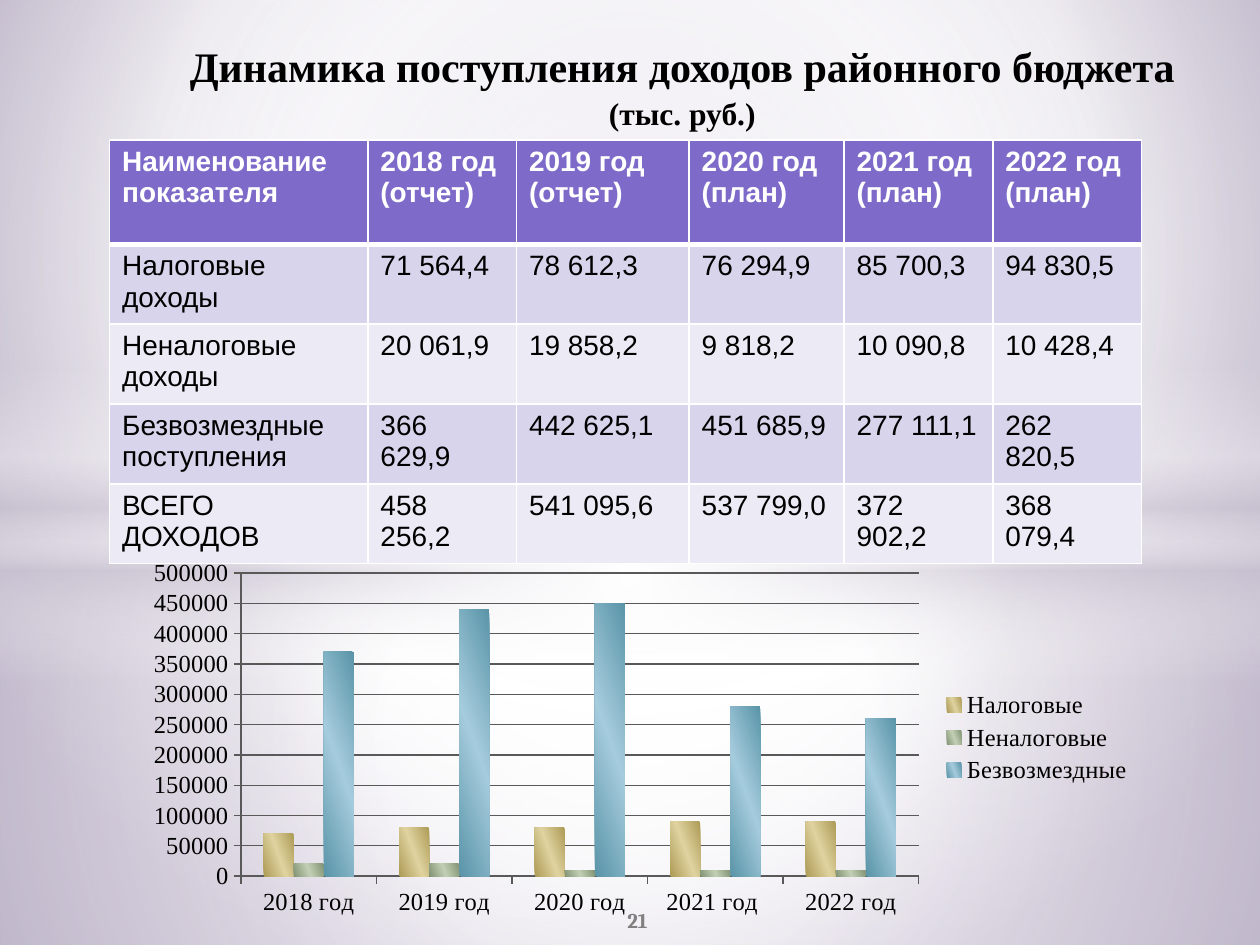
from lxml.etree import SubElement
from pptx import Presentation
from pptx.chart.data import CategoryChartData
from pptx.enum.chart import XL_CHART_TYPE, XL_LEGEND_POSITION, XL_TICK_MARK
from pptx.enum.shapes import MSO_SHAPE
from pptx.enum.text import MSO_ANCHOR, PP_ALIGN
from pptx.dml.color import RGBColor
from pptx.oxml.ns import qn
from pptx.util import Inches, Pt

COLORS = {
    "white": "FFFFFF", "black": "000000", "gray": "808080", "axis": "595959",
    "mist": "C9C2D1", "lilac": "C1B7CD", "plum": "A191B5",
    "header": "7E6BC9", "band_dark": "D8D4EB", "band_light": "ECEBF5",
    "gold_dark": "AD9B56", "gold_light": "E0D3A0",
    "green_dark": "839476", "green_light": "C2CFB4",
    "blue_dark": "5A94A8", "blue_light": "A5CCDD",
}
SERIF = "Times New Roman"
CENTER = (50, 50, 50, 50)

HEADER = ["Наименование показателя", "2018 год (отчет)", "2019 год (отчет)",
          "2020 год (план)", "2021 год (план)", "2022 год (план)"]
ROWS = [
    ["Налоговые доходы", "71 564,4", "78 612,3", "76 294,9", "85 700,3", "94 830,5"],
    ["Неналоговые доходы", "20 061,9", "19 858,2", "9 818,2", "10 090,8", "10 428,4"],
    ["Безвозмездные поступления", "366 629,9", "442 625,1", "451 685,9", "277 111,1", "262 820,5"],
    ["ВСЕГО ДОХОДОВ", "458 256,2", "541 095,6", "537 799,0", "372 902,2", "368 079,4"],
]
YEARS = ["2018 год", "2019 год", "2020 год", "2021 год ", "2022 год"]
SERIES = [("Налоговые", "gold"), ("Неналоговые", "green"), ("Безвозмездные", "blue")]


def rgb(name):
    return RGBColor.from_string(COLORS[name])


def rounded(text):
    return round(float(text.replace(" ", "").replace(",", ".")) / 10000) * 10000


class SlideBuilder:
    def __init__(self, slide, font="Arial", size=16):
        self.slide = slide
        self.font = font
        self.size = size

    def gradient(self, fill, parent, stops, center=None, angle=0):
        fill.gradient()
        grad = parent.find(qn("a:gradFill"))
        for child in list(grad):
            grad.remove(child)
        stop_list = SubElement(grad, qn("a:gsLst"))
        for position, name, alpha in stops:
            stop = SubElement(stop_list, qn("a:gs"), pos=str(position * 1000))
            color = SubElement(stop, qn("a:srgbClr"), val=COLORS[name])
            if alpha < 100:
                SubElement(color, qn("a:alpha"), val=str(alpha * 1000))
        if center:
            route = SubElement(grad, qn("a:path"))
            route.set("path", "circle")
            sides = {side: str(value * 1000) for side, value in zip("ltrb", center)}
            SubElement(route, qn("a:fillToRect"), **sides)
        else:
            SubElement(grad, qn("a:lin"), ang=str(angle * 60000), scaled="0")

    def background(self, stops, center):
        fill = self.slide.background.fill
        fill.solid()
        parent = self.slide.element.find(".//" + qn("p:bgPr"))
        self.gradient(fill, parent, stops, center)

    def glow(self, kind, top, height, stops, center=None, angle=0):
        shape = self.slide.shapes.add_shape(kind, 0, Inches(top), Inches(10), Inches(height))
        shape.shadow.inherit = False
        shape.line.fill.background()
        self.gradient(shape.fill, shape.element.spPr, stops, center, angle)

    def run(self, para, text, size=None, color="black", bold=False, font=None):
        span = para.add_run()
        span.text = text
        span.font.name = font or self.font
        span.font.size = Pt(size or self.size)
        span.font.bold = bold
        span.font.color.rgb = rgb(color)

    def text(self, at, spans, color, font, anchor=MSO_ANCHOR.TOP, indent=0):
        box = self.slide.shapes.add_textbox(*map(Inches, at))
        frame = box.text_frame
        frame.word_wrap = True
        frame.vertical_anchor = anchor
        para = frame.paragraphs[0]
        para.alignment = PP_ALIGN.CENTER
        if indent:
            properties = para._p.get_or_add_pPr()
            properties.set("marL", str(Inches(indent)))
            properties.set("indent", "0")
        for text, size in spans:
            self.run(para, text, size, color, True, font)

    def borders(self, cell, bottom):
        properties = cell._tc.get_or_add_tcPr()
        for side, width in (("L", 1), ("R", 1), ("T", 1), ("B", bottom)):
            line = SubElement(properties, qn("a:ln" + side), w=str(Pt(width)))
            fill = SubElement(line, qn("a:solidFill"))
            SubElement(fill, qn("a:srgbClr"), val=COLORS["white"])

    def table(self, left, top, rows, widths, heights):
        at = (left, top, sum(widths), sum(heights))
        frame = self.slide.shapes.add_table(len(rows), len(widths), *map(Inches, at))
        table = frame.table
        for column, width in zip(table.columns, widths):
            column.width = Inches(width)
        for row, height in zip(table.rows, heights):
            row.height = Inches(height)
        for r, texts in enumerate(rows):
            head = r == 0
            band = "header" if head else "band_dark" if r % 2 else "band_light"
            for c, text in enumerate(texts):
                cell = table.cell(r, c)
                self.borders(cell, 3 if head else 1)
                cell.fill.solid()
                cell.fill.fore_color.rgb = rgb(band)
                self.run(cell.text_frame.paragraphs[0], text,
                         color="white" if head else "black", bold=head)

    def style_font(self, font, size, name):
        font.size = Pt(size)
        font.name = name
        font.color.rgb = rgb("black")

    def chart(self, at, categories, series):
        data = CategoryChartData(number_format="General")
        data.categories = categories
        for name, tone, values in series:
            data.add_series(name, values)
        chart = self.slide.shapes.add_chart(
            XL_CHART_TYPE.COLUMN_CLUSTERED, *map(Inches, at), data).chart
        self.style_font(chart.font, 18, "Cambria")
        chart.has_title = False
        chart.has_legend = True
        chart.legend.position = XL_LEGEND_POSITION.RIGHT
        chart.legend.include_in_layout = False
        self.style_font(chart.legend.font, 14, SERIF)
        for axis in (chart.category_axis, chart.value_axis):
            axis.major_tick_mark = XL_TICK_MARK.OUTSIDE
            axis.format.line.color.rgb = rgb("axis")
            self.style_font(axis.tick_labels.font, 14, SERIF)
        scale = chart.value_axis
        scale.minimum_scale, scale.maximum_scale, scale.major_unit = 0, 500000, 50000
        scale.has_major_gridlines = True
        scale.major_gridlines.format.line.color.rgb = rgb("axis")
        plot = chart.plots[0]
        plot.gap_width = 150
        plot.vary_by_categories = False
        for bars, (name, tone, values) in zip(plot.series, series):
            bars.invert_if_negative = False
            fill = bars.format.fill
            stops = [(0, tone + "_dark", 100), (50, tone + "_light", 100), (100, tone + "_dark", 100)]
            self.gradient(fill, bars._element.get_or_add_spPr(), stops, angle=340)


def main():
    deck = Presentation()
    deck.slide_width, deck.slide_height = Inches(10), Inches(7.5)
    page = SlideBuilder(deck.slides.add_slide(deck.slide_layouts[6]))

    page.background([(0, "lilac", 100), (60, "white", 100), (100, "plum", 100)], (20, 10, 20, 60))
    page.glow(MSO_SHAPE.RECTANGLE, 4.23, 3.27,
              [(0, "white", 91), (37, "white", 76), (100, "mist", 79)], CENTER)
    page.glow(MSO_SHAPE.RECTANGLE, 0, 4.23,
              [(0, "white", 89), (48, "white", 62), (100, "mist", 79)], CENTER)
    page.glow(MSO_SHAPE.RECTANGLE, 2.9, 2.5,
              [(0, "white", 0), (29, "white", 30), (45, "mist", 40),
               (55, "white", 26), (65, "mist", 60), (100, "white", 0)], angle=90)
    page.glow(MSO_SHAPE.OVAL, 1.75, 5.58, [(0, "white", 100), (54, "white", 0)], CENTER)

    page.text((4.06, 7.1, 2, 0.4), [("21", 12)], "gray", "Cambria", MSO_ANCHOR.MIDDLE)
    page.text((1.14, 0.16, 8.35, 0.79),
              [("Динамика поступления доходов районного бюджета", 24), (" ", 32), ("(тыс. руб.)", 18)],
              "black", SERIF, indent=0.2)
    page.table(0.87, 1.11, [HEADER] + ROWS,
               [2.05, 1.18, 1.37, 1.23, 1.18, 1.18], [0.83] + [0.6] * len(ROWS))
    page.chart((1.06, 4.38, 8.03, 2.95), YEARS,
               [(name, tone, [rounded(text) for text in row[1:]])
                for (name, tone), row in zip(SERIES, ROWS)])
    deck.save("out.pptx")


if __name__ == "__main__":
    main()
